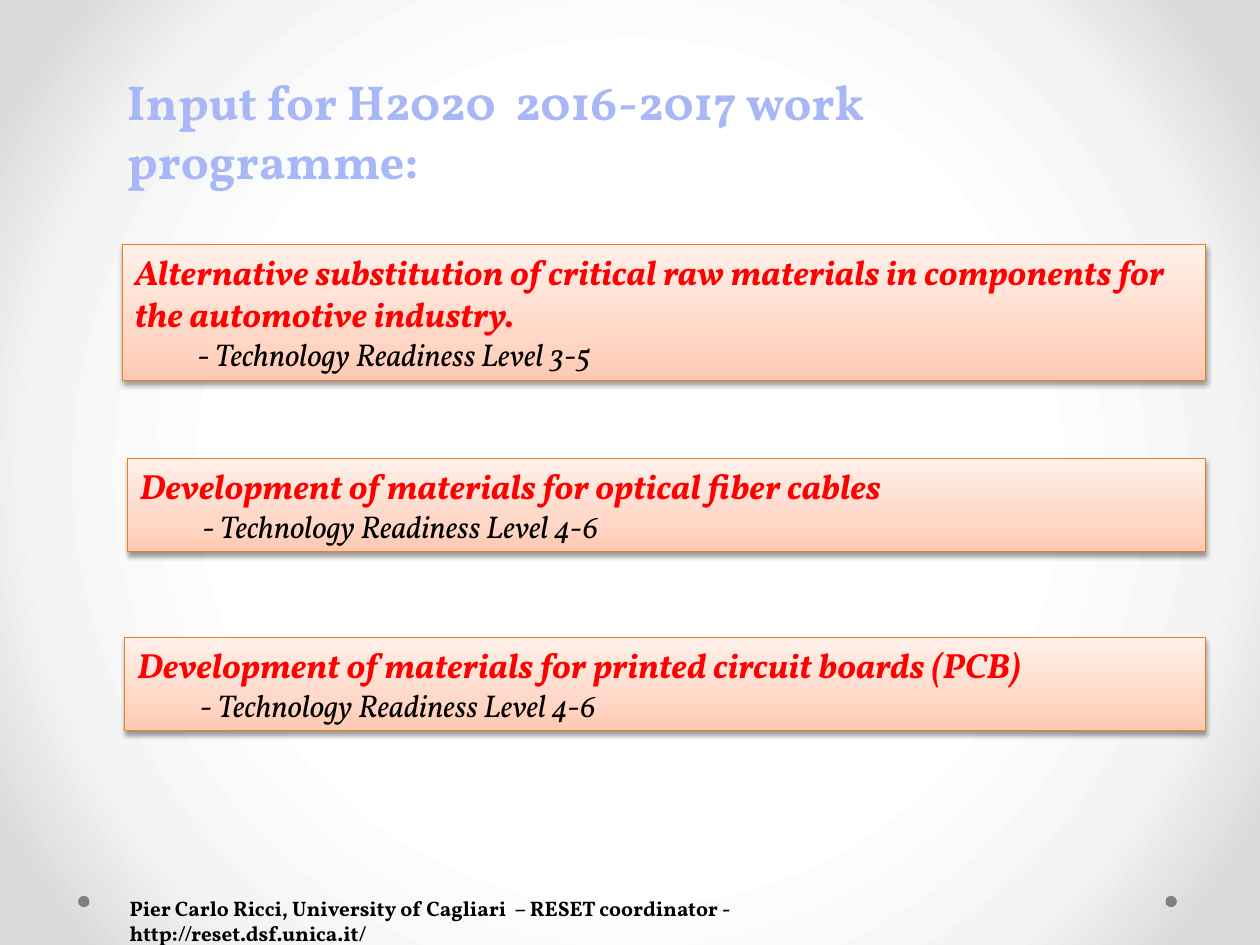
"""Build the H2020 work programme input slide."""
from pptx import Presentation
from pptx.dml.color import RGBColor
from pptx.enum.shapes import MSO_SHAPE
from pptx.enum.text import MSO_ANCHOR, PP_ALIGN
from pptx.oxml import parse_xml
from pptx.oxml.ns import nsdecls, qn
from pptx.util import Inches, Pt

RECT, OVAL = MSO_SHAPE.RECTANGLE, MSO_SHAPE.OVAL
LEFT, TOP = PP_ALIGN.LEFT, MSO_ANCHOR.TOP

FONT = "Vollkorn"
HEX = {"title": "A8B8F6", "topic": "FF0000", "text": "000000",
       "edge": "E6811C", "dot": "808080"}
BACK = [(50, "FFFFFF"), (76, "F4F4F4"), (92, "DADADA")]
PEACH = [(0, "FFC9B1"), (35, "FFD8C8"), (100, "FFF0EA")]
ROUND = ('<a:path path="circle"><a:fillToRect l="50000" t="50000" '
         'r="50000" b="50000"/></a:path>')
UP = '<a:lin ang="16200000" scaled="0"/>'
SHADOW = ('<a:effectLst {}><a:outerShdw blurRad="39370" dist="20320" '
          'dir="5400000" rotWithShape="0"><a:srgbClr val="000000">'
          '<a:alpha val="38000"/></a:srgbClr></a:outerShdw></a:effectLst>')

TITLE = "Input for H2020  2016-2017 work programme:"
FOOTER = ("Pier Carlo Ricci, University of Cagliari  – RESET coordinator - "
          "http://reset.dsf.unica.it/")
RIGHT = 9.57
PANELS = [
    (0.97, 1.94, 1.08, "Alternative substitution of critical raw materials "
     "in components for the automotive industry.", "3-5"),
    (1.01, 3.64, 0.74, "Development of materials for optical fiber cables",
     "4-6"),
    (0.99, 5.06, 0.74,
     "Development of materials for printed circuit boards (PCB)", "4-6"),
]
DOTS = [0.62, 9.25]


def color(name):
    return RGBColor.from_string(HEX[name])


def blend(stops, way):
    marks = "".join(f'<a:gs pos="{pos * 1000}"><a:srgbClr val="{tone}"/></a:gs>'
                    for pos, tone in stops)
    return parse_xml(f'<a:gradFill {nsdecls("a")} rotWithShape="1">'
                     f'<a:gsLst>{marks}</a:gsLst>{way}</a:gradFill>')


def write(shape, lines):
    frame = shape.text_frame
    frame.word_wrap = True
    frame.vertical_anchor = TOP
    for i, (text, size, tone, bold, slant) in enumerate(lines):
        para = frame.add_paragraph() if i else frame.paragraphs[0]
        para.alignment = LEFT
        para.add_run().text = text
        font = para.font
        font.name, font.size = FONT, Pt(size)
        font.bold, font.italic = bold, slant
        font.color.rgb = color(tone)


def add_dot(shapes, left):
    dot = shapes.add_shape(OVAL, *map(Inches, (left, 7.11, 0.09, 0.09)))
    dot.shadow.inherit = False
    dot.fill.solid()
    dot.fill.fore_color.rgb = color("dot")
    dot.line.fill.background()


def add_panel(shapes, left, top, height, topic, level):
    box = (left, top, RIGHT - left, height)
    panel = shapes.add_shape(RECT, *map(Inches, box))
    props = panel._element.spPr
    props.find(qn("a:prstGeom")).addnext(blend(PEACH, UP))
    panel.line.color.rgb = color("edge")
    panel.line.width = Pt(0.75)
    props.append(parse_xml(SHADOW.format(nsdecls("a"))))
    write(panel, [(topic, 20, "topic", True, True),
                  (f"\t- Technology Readiness Level {level}",
                   18, "text", False, True)])


def add_label(shapes, box, text, size, tone):
    label = shapes.add_textbox(*map(Inches, box))
    write(label, [(text, size, tone, True, False)])


def main():
    deck = Presentation()
    deck.slide_width, deck.slide_height = Inches(10), Inches(7.5)
    slide = deck.slides.add_slide(deck.slide_layouts[6])
    slide.background.fill.solid()
    base = slide._element.find(".//" + qn("p:bgPr"))
    base.replace(base[0], blend(BACK, ROUND))
    shapes = slide.shapes
    for left in DOTS:
        add_dot(shapes, left)
    for panel in PANELS:
        add_panel(shapes, *panel)
    add_label(shapes, (0.91, 0.52, 6.77, 1.04), TITLE, 28, "title")
    add_label(shapes, (0.93, 7.06, 6.79, 0.5), FOOTER, 12, "text")
    deck.save("out.pptx")


if __name__ == "__main__":
    main()
